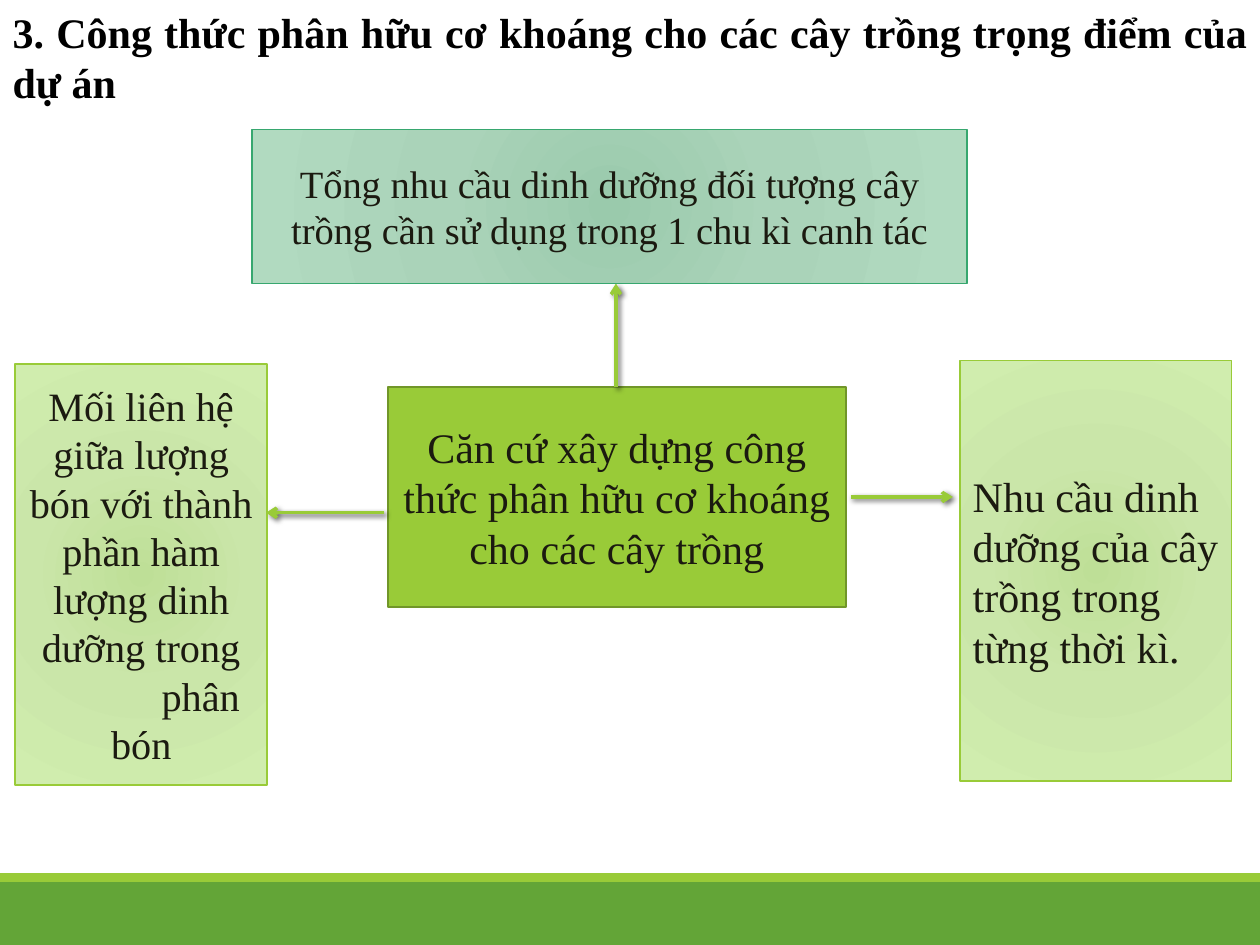
from lxml import etree
from pptx import Presentation
from pptx.dml.color import RGBColor
from pptx.enum.shapes import MSO_CONNECTOR, MSO_SHAPE
from pptx.enum.text import MSO_ANCHOR, MSO_AUTO_SIZE, PP_ALIGN
from pptx.oxml import parse_xml
from pptx.oxml.ns import nsdecls, qn
from pptx.util import Pt

RECTANGLE = MSO_SHAPE.RECTANGLE
STRAIGHT = MSO_CONNECTOR.STRAIGHT
LEFT, CENTER, JUSTIFY = PP_ALIGN.LEFT, PP_ALIGN.CENTER, PP_ALIGN.JUSTIFY

FONT = "Times New Roman"
BLACK = RGBColor(0x00, 0x00, 0x00)
INK = RGBColor(0x1B, 0x1A, 0x10)
LIME = RGBColor(0x99, 0xCB, 0x38)
OLIVE = RGBColor(0x71, 0x96, 0x29)
GREEN = RGBColor(0x63, 0xA5, 0x37)
TEAL = RGBColor(0x37, 0xA7, 0x6F)
# Gradient colours, from the middle outwards
STOPS = (0, 45, 100)
MINT = [RGBColor.from_string(c) for c in ("9ACAAC", "AAD3B9", "B1DAC0")]
PALE_LIME = [RGBColor.from_string(c) for c in ("BEDF97", "CAE6A9", "D0EDAE")]

# Content: lengths in points, areas as left, top, width, height
TITLE = "3. Công thức phân hữu cơ khoáng cho các cây trồng trọng điểm của dự án"
BARS = [((0, 504, 720, 36), GREEN), ((0, 499, 720, 5), LIME)]
# Each paragraph: text, left indent
BASIS = dict(
    area=(221.75, 221, 261.5, 126), fill=LIME, line=(OLIVE, 1.25), size=24, align=CENTER,
    paragraphs=[("Căn cứ xây dựng công thức phân hữu cơ khoáng cho các cây trồng", 0)])
FACTORS = [
    dict(area=(144, 74, 408.5, 88), fill=MINT, line=(TEAL, 1), size=22, align=CENTER,
         paragraphs=[("Tổng nhu cầu dinh dưỡng đối tượng cây trồng cần sử dụng "
                      "trong 1 chu kì canh tác", 0)]),
    dict(area=(8.75, 208, 144, 240.5), fill=PALE_LIME, line=(LIME, 1), size=23, align=CENTER,
         paragraphs=[("Mối liên hệ giữa lượng bón với thành phần hàm lượng dinh dưỡng trong", 0),
                     ("phân", 68), ("bón", 0)]),
    dict(area=(548.75, 206, 155, 240.5), fill=PALE_LIME, line=(LIME, 1), size=24, align=LEFT,
         paragraphs=[("Nhu cầu dinh dưỡng của cây trồng trong từng thời kì.", 0)]),
]
ARROWS = [((352, 221), (352, 162)), ((219.5, 293), (152, 293)), ((486, 284), (544.5, 284))]


def points(values):
    return [Pt(value) for value in values]


def style(para, size, color, align, bold=False):
    para.alignment = align
    font = para.font
    font.name, font.size, font.bold = FONT, Pt(size), bold
    font.color.rgb = color


def add_bar(page, area, color):
    bar = page.shapes.add_shape(RECTANGLE, *points(area))
    bar.shadow.inherit = False
    bar.fill.solid()
    bar.fill.fore_color.rgb = color
    bar.line.fill.background()
    return bar


def radial_fill(box, colors):
    stops = "".join(
        f'<a:gs pos="{position * 1000}"><a:srgbClr val="{color}"/></a:gs>'
        for position, color in zip(STOPS, colors))
    gradient = parse_xml(
        f'<a:gradFill {nsdecls("a")} rotWithShape="1"><a:gsLst>{stops}</a:gsLst>'
        '<a:path path="circle"><a:fillToRect l="100000" t="100000" r="100000" b="100000"/>'
        '</a:path></a:gradFill>')
    properties = box.fill._xPr
    properties.replace(properties.find(qn("a:solidFill")), gradient)


def add_box(page, area, fill, line, size, align, paragraphs):
    solid = isinstance(fill, RGBColor)
    box = add_bar(page, area, fill if solid else fill[0])
    if not solid:
        radial_fill(box, fill)
    box.line.color.rgb = line[0]
    box.line.width = Pt(line[1])
    frame = box.text_frame
    frame.word_wrap = True
    frame.vertical_anchor = MSO_ANCHOR.MIDDLE
    for number, (text, indent) in enumerate(paragraphs):
        para = frame.add_paragraph() if number else frame.paragraphs[0]
        para.text = text
        style(para, size, INK, align)
        if indent:
            para._p.get_or_add_pPr().set("marL", str(Pt(indent)))


def add_arrow(page, start, end):
    arrow = page.shapes.add_connector(STRAIGHT, *points(start + end))
    arrow.line.color.rgb = LIME
    arrow.line.width = Pt(2)
    etree.SubElement(arrow.line._get_or_add_ln(), qn("a:tailEnd"), type="arrow")
    arrow._element.spPr.append(parse_xml(
        f'<a:effectLst {nsdecls("a")}><a:outerShdw blurRad="{Pt(3)}" dist="{Pt(2)}" '
        'dir="2700000" rotWithShape="0"><a:srgbClr val="000000"><a:alpha val="60000"/>'
        '</a:srgbClr></a:outerShdw></a:effectLst>'))


def main():
    deck = Presentation()
    deck.slide_width, deck.slide_height = Pt(720), Pt(540)
    page = deck.slides.add_slide(deck.slide_layouts[5])

    # Title
    title = page.shapes.title
    title.left, title.top, title.width, title.height = points((0, 0, 720, 65.5))
    frame = title.text_frame
    frame.text = TITLE
    frame.word_wrap = True
    frame.auto_size = MSO_AUTO_SIZE.NONE
    frame.vertical_anchor = MSO_ANCHOR.TOP
    style(frame.paragraphs[0], 24, BLACK, JUSTIFY, bold=True)

    # Footer bars
    for area, color in BARS:
        add_bar(page, area, color)

    # Central box, arrows and the factors they lead to
    add_box(page, **BASIS)
    for start, end in ARROWS:
        add_arrow(page, start, end)
    for factor in FACTORS:
        add_box(page, **factor)

    deck.save("out.pptx")


if __name__ == "__main__":
    main()
